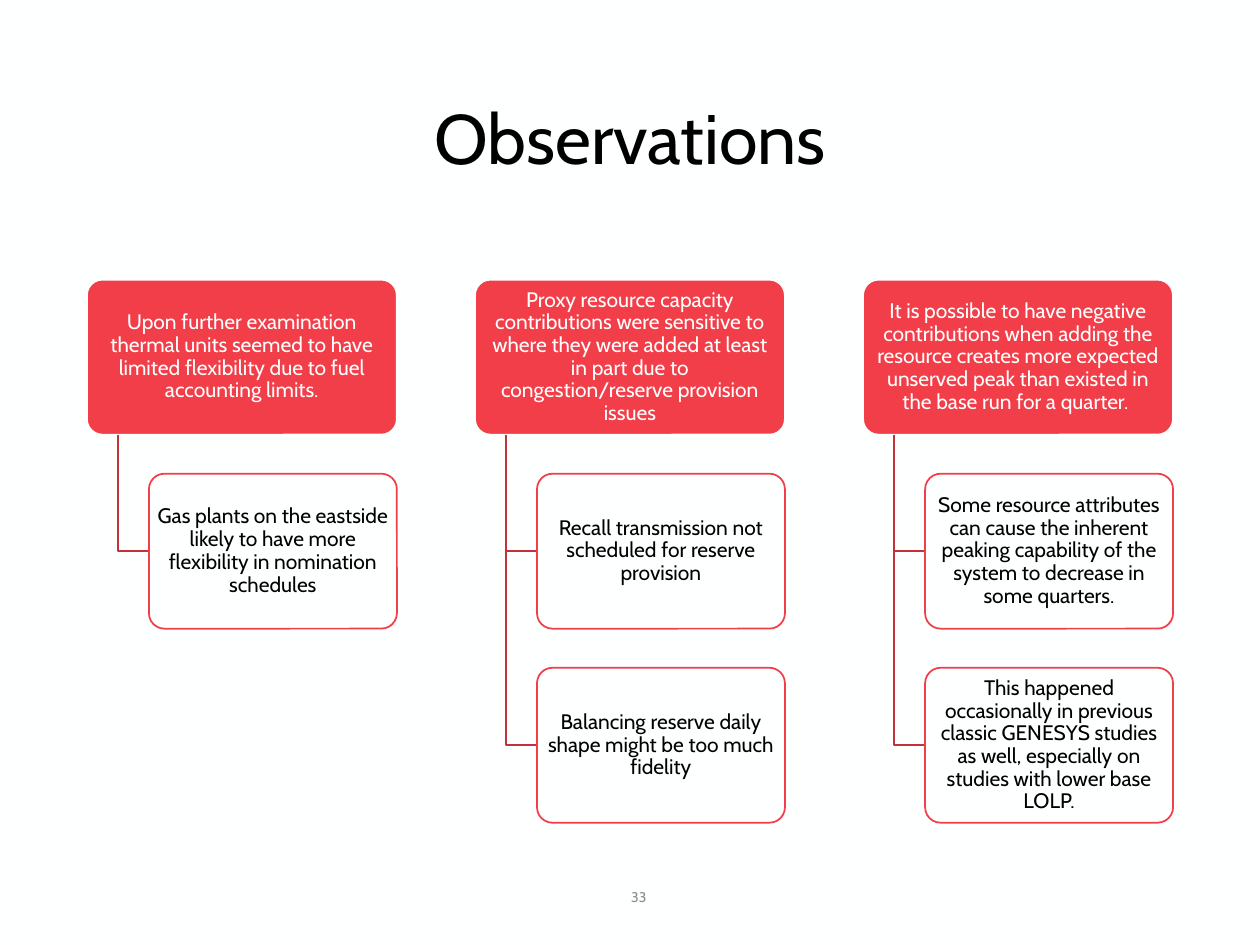
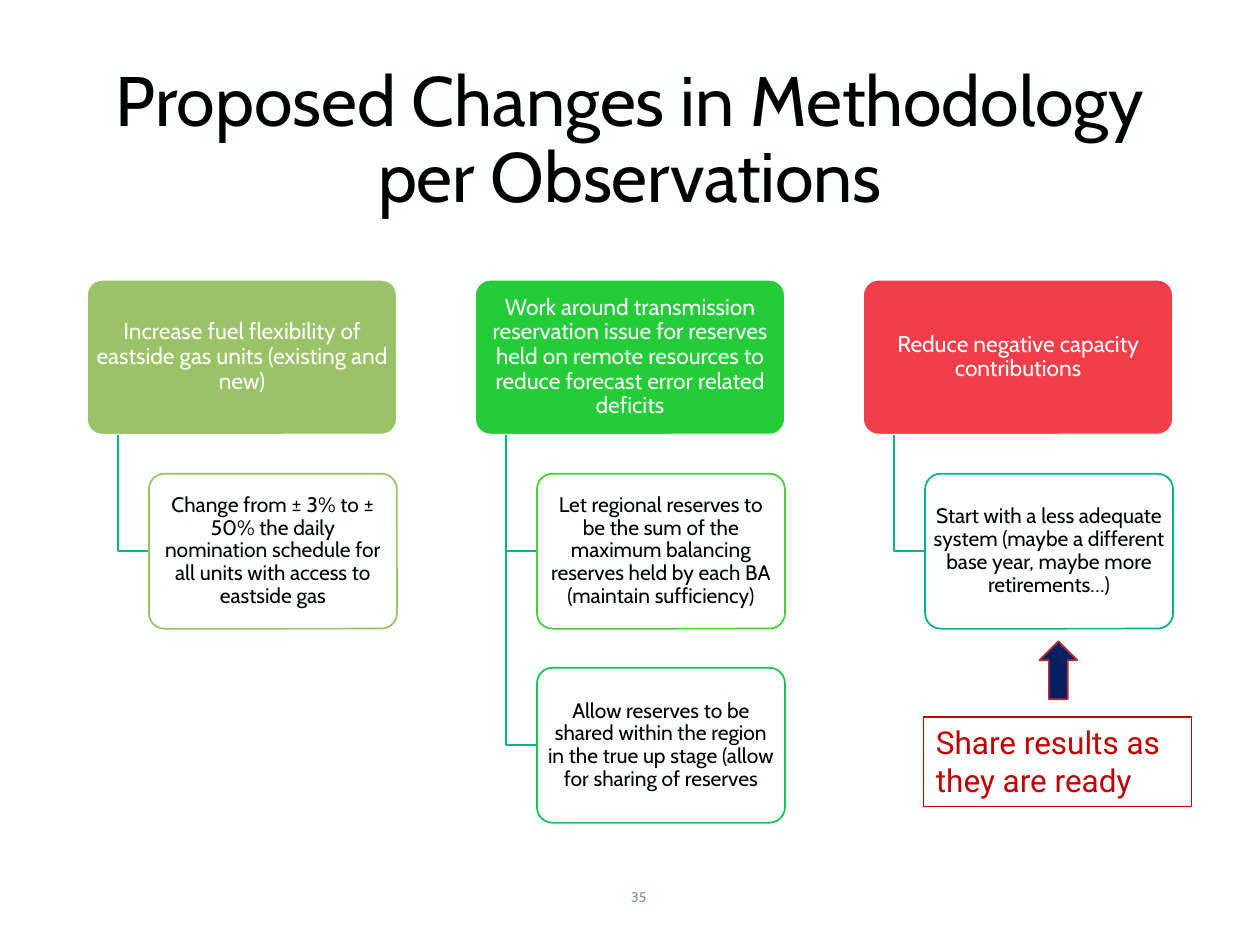
"""Build two slides of observation and methodology trees."""
import lxml.etree
import pptx
import pptx.dml.color
import pptx.enum.shapes
import pptx.enum.text
import pptx.oxml.ns
import pptx.util

Inches = pptx.util.Inches
RGB = pptx.dml.color.RGBColor
MSO_SHAPE = pptx.enum.shapes.MSO_SHAPE
PP_ALIGN = pptx.enum.text.PP_ALIGN
ANCHOR = pptx.enum.text.MSO_ANCHOR

PAPER = RGB(0xFE, 0xFF, 0xFF)
BLACK = RGB(0x00, 0x00, 0x00)
GRAY = RGB(0x8C, 0x8C, 0x8C)
RED = RGB(0xF2, 0x3E, 0x49)
DARK_RED = RGB(0xC2, 0x32, 0x3A)
ARROW_RED = RGB(0xB3, 0x2E, 0x36)
NOTE_RED = RGB(0xC0, 0x00, 0x00)
NAVY = RGB(0x00, 0x20, 0x60)
TEAL = RGB(0x03, 0xB2, 0x8B)
OLIVE = RGB(0x9A, 0xC3, 0x68)
GREEN = RGB(0x24, 0xCC, 0x37)
LIME = RGB(0x46, 0xCE, 0x36)
EMERALD = RGB(0x17, 0xC5, 0x51)

LEFT, TOP = 0.69, 2.22
COL, ROW = 3.08, 1.54
HEAD_W, BOX_H = 2.46, 1.23
TRUNK, INDENT = HEAD_W * 0.1, HEAD_W * 0.2

SLIDES = [
    ("Observations", "33", 12, DARK_RED, [
        [("Upon further examination thermal units seemed to have limited flexibility "
          "due to fuel accounting limits.", RED),
         ("Gas plants on the eastside likely to have more flexibility in nomination "
          "schedules", RED)],
        [("Proxy resource capacity contributions were sensitive to where they were added "
          "at least in part due to congestion/reserve provision issues", RED),
         ("Recall transmission not scheduled for reserve provision", RED),
         ("Balancing reserve daily shape might be too much fidelity", RED)],
        [("It is possible to have negative contributions when adding the resource creates "
          "more expected unserved peak than existed in the base run for a quarter. ", RED),
         ("Some resource attributes can cause the inherent peaking capability of the "
          "system to decrease in some quarters.", RED),
         ("This happened occasionally in previous classic GENESYS studies as well, "
          "especially on studies with lower base LOLP.", RED)],
    ]),
    ("Proposed Changes in Methodology per Observations", "35", 13, TEAL, [
        [("Increase fuel flexibility of eastside gas units (existing and new)", OLIVE),
         ("Change from ± 3% to ± 50% the daily nomination schedule for all units with "
          "access to eastside gas", OLIVE)],
        [("Work around transmission reservation issue for reserves held on remote "
          "resources to reduce forecast error related deficits", GREEN),
         ("Let regional reserves to be the sum of the maximum balancing reserves held by "
          "each BA (maintain sufficiency)", LIME),
         ("Allow reserves to be shared within the region in the true up stage (allow for "
          "sharing of reserves", EMERALD)],
        [("Reduce negative capacity contributions", RED),
         ("Start with a less adequate system (maybe a different base year, maybe more "
          "retirements…)", TEAL)],
    ]),
]


def write(shape, text, size, color, font="Cabin", align=PP_ALIGN.CENTER,
          anchor=ANCHOR.MIDDLE, spacing=1.0, inset=(0.1, 0.05)):
    tf = shape.text_frame
    tf.word_wrap = True
    tf.auto_size = pptx.enum.text.MSO_AUTO_SIZE.NONE
    tf.vertical_anchor = anchor
    tf.margin_left = tf.margin_right = Inches(inset[0])
    tf.margin_top = tf.margin_bottom = Inches(inset[1])
    p = tf.paragraphs[0]
    p.alignment, p.line_spacing = align, spacing
    r = p.add_run()
    r.text = text
    r.font.name, r.font.size, r.font.color.rgb = font, pptx.util.Pt(size), color


def paint(shape, line, fill=None, weight=1):
    shape.shadow.inherit = False
    shape.line.color.rgb, shape.line.width = line, pptx.util.Pt(weight)
    if fill is None:
        shape.fill.background()
    else:
        shape.fill.solid()
        shape.fill.fore_color.rgb = fill


prs = pptx.Presentation()
prs.slide_width, prs.slide_height = Inches(10), Inches(7.5)
prs.slide_master.background.fill.solid()
prs.slide_master.background.fill.fore_color.rgb = PAPER

for title, number, head_size, branch_color, columns in SLIDES:
    s = prs.slides.add_slide(prs.slide_layouts[5])
    sp = s.shapes.title
    sp.left, sp.top = Inches(LEFT), Inches(0.4)
    sp.width, sp.height = Inches(10 - 2 * LEFT), Inches(1.45)
    write(sp, title, 40, BLACK, spacing=0.9)

    for col, boxes in enumerate(columns):
        x = LEFT + col * COL
        for row, (text, color) in enumerate(boxes):
            y = TOP + row * ROW
            shift = INDENT if row else 0
            if row:
                trunk, middle = Inches(x + TRUNK), Inches(y + BOX_H / 2)
                branch = s.shapes.build_freeform(trunk, Inches(TOP + BOX_H))
                branch.add_line_segments([(trunk, middle), (Inches(x + INDENT), middle)],
                                         close=False)
                paint(branch.convert_to_shape(), branch_color)
            sp = s.shapes.add_shape(MSO_SHAPE.ROUNDED_RECTANGLE, Inches(x + shift), Inches(y),
                                    Inches(HEAD_W - shift / 1), Inches(BOX_H))
            sp.adjustments[0] = 0.1
            if row:
                paint(sp, color, PAPER)
                tint = sp.fill._xPr.find(".//" + pptx.oxml.ns.qn("a:srgbClr"))
                lxml.etree.SubElement(tint, pptx.oxml.ns.qn("a:alpha"), val="90000")
            else:
                paint(sp, PAPER, color)
            write(sp, text, 12 if row else head_size, BLACK if row else PAPER,
                  spacing=0.9, inset=(0.03, 0.02))

    sp = s.shapes.add_textbox(Inches(4.78), Inches(6.92), Inches(0.58), Inches(0.4))
    write(sp, number, 8, GRAY)

arrow = s.shapes.add_shape(MSO_SHAPE.UP_ARROW, Inches(8.25), Inches(5.09),
                           Inches(0.3), Inches(0.46))
paint(arrow, ARROW_RED, NAVY)
note = s.shapes.add_shape(MSO_SHAPE.RECTANGLE, Inches(7.33), Inches(5.69),
                          Inches(2.13), Inches(0.71))
paint(note, NOTE_RED, weight=0.75)
write(note, "Share results as they are ready", 18, NOTE_RED, font="Roboto",
      align=PP_ALIGN.LEFT, anchor=ANCHOR.TOP)

prs.save("out.pptx")
